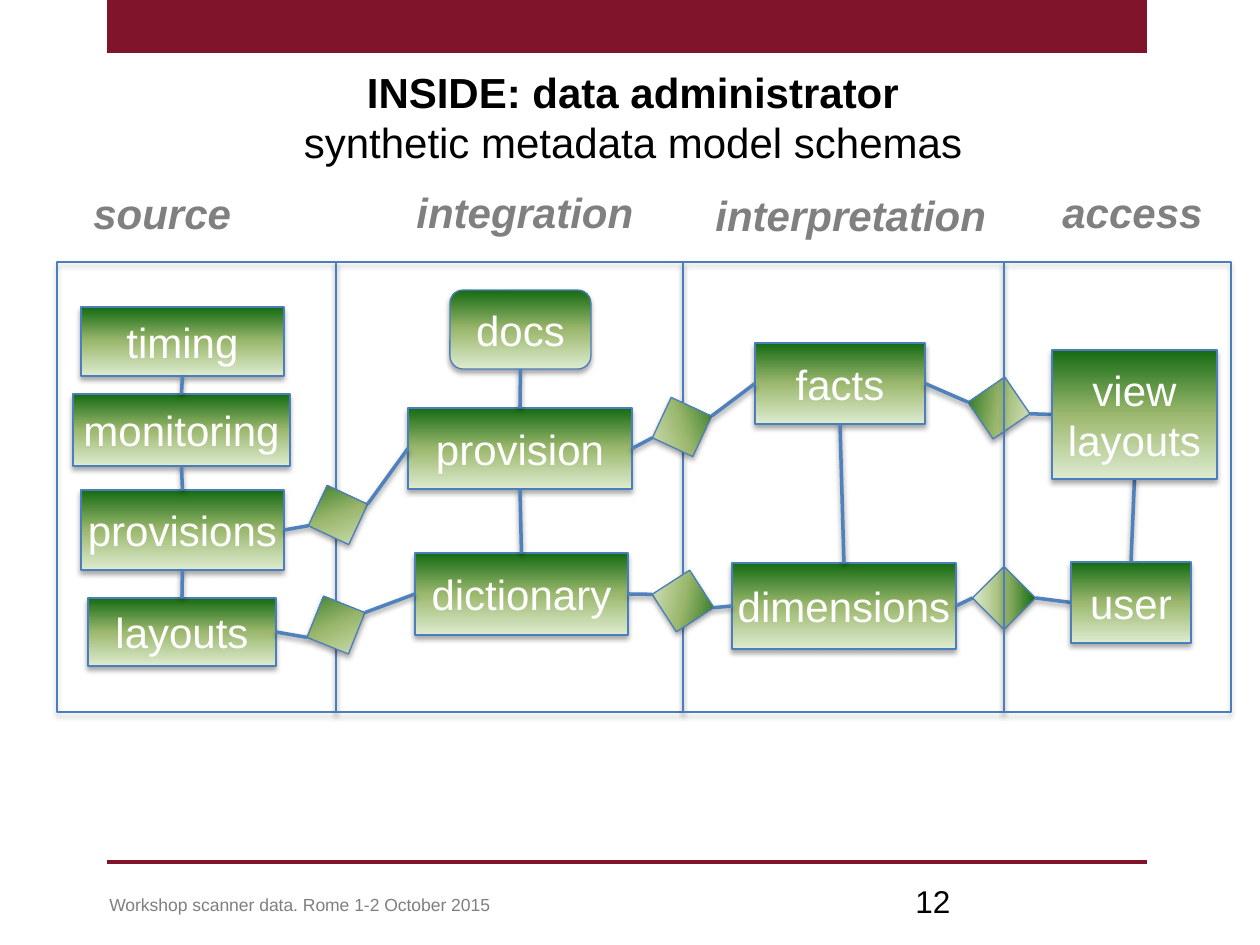
import copy
import math
from dataclasses import dataclass

from pptx import Presentation
from pptx import oxml
from pptx import util as u
from pptx.dml.color import RGBColor
from pptx.enum import shapes, text
from pptx.oxml.ns import qn

PX = 914400 / 126


@dataclass(frozen=True)
class Theme:
    """Colours, type sizes and font of the slide."""
    font: str = "Arial"
    brand: str = "7F142A"
    ink: str = "000000"
    heading: str = "808080"
    footer: str = "7F7F7F"
    white: str = "FFFFFF"
    outline: str = "4B7EBC"
    link: str = "4F81BD"
    greens: tuple = ((0, "DDEBCF"), (0.5, "9CB86E"), (1, "156B13"))
    large: int = 24
    number: int = 18
    small: int = 10


T = Theme()
SCHEMA = (57, 262, 1174, 450)
JOINT = 63

LANES = [
    ("source", 0, 279, (24, -81), {
        "timing": (24, 45, 203, 69),
        "monitoring": (16, 132, 217, 72),
        "provisions": (24, 228, 203, 80),
        "layouts": (31, 336, 188, 68)}),
    ("integration", 279, 347, (68, -82), {
        "docs": (114, 28, 141, 79),
        "provision": (72, 146, 224, 81),
        "dictionary": (79, 291, 213, 82)}),
    ("interpretation", 626, 321, (20, -79), {
        "facts": (72, 81, 170, 81),
        "dimensions": (49, 301, 224, 86)}),
    ("access", 947, 227, (46, -82), {
        "view layouts": (48, 88, 165, 129),
        "user": (67, 300, 120, 81)}),
]

JOINTS = [
    ("provisions", "provision", 281, 253, 340),
    ("layouts", "dictionary", 279, 363, 336.8),
    ("provision", "facts", 625, 165, 69.9),
    ("dictionary", "dimensions", 626, 339, 102.2),
    ("facts", "view layouts", 942, 146, 280.6),
    ("dimensions", "user", 947, 336, 90),
]

STACKS = [
    ("timing", "monitoring"), ("monitoring", "provisions"), ("provisions", "layouts"),
    ("docs", "provision"), ("provision", "dictionary"),
    ("facts", "dimensions"), ("view layouts", "user"),
]


def emu(*values):
    """Turn px lengths into EMU."""
    return [u.Emu(round(v * PX)) for v in values]


def rgb(color):
    """Return the colour object of a hex string."""
    return RGBColor.from_string(color)


def add_shadow(sp, alpha, dist):
    """Give a shape or connector a soft shadow straight below it."""
    sp.shadow.inherit = False
    effects = sp._element.spPr.find(qn("a:effectLst"))
    effects.append(oxml.parse_xml(
        '<a:outerShdw xmlns:a="http://schemas.openxmlformats.org/drawingml/2006/main"'
        f' blurRad="{u.Pt(3.1)}" dist="{u.Pt(dist)}" dir="5400000" rotWithShape="0">'
        f'<a:srgbClr val="000000"><a:alpha val="{alpha * 1000}"/></a:srgbClr></a:outerShdw>'))


def write(tf, lines, size=T.large, color=T.ink, bold=False, italic=False, align=None):
    """Write one paragraph; lines is a string or (string, bold) pairs split by breaks."""
    p = tf.paragraphs[0]
    p.alignment = align
    pairs = [(lines, bold)] if isinstance(lines, str) else lines
    for i, (words, heavy) in enumerate(pairs):
        if i:
            p.add_line_break()
        r = p.add_run()
        r.text = words
        r.font.name, r.font.size = T.font, u.Pt(size)
        r.font.bold, r.font.italic = heavy, italic
        r.font.color.rgb = rgb(color)


def add_label(s, box, lines, wrap=True, **fmt):
    """Add a text box."""
    tf = s.shapes.add_textbox(*emu(*box)).text_frame
    tf.word_wrap = wrap
    write(tf, lines, **fmt)


def add_outlined(s, kind, box):
    """Add an unfilled shape with the thin outline and shadow of the diagram."""
    sp = s.shapes.add_shape(kind, *emu(*box))
    sp.fill.background()
    sp.line.color.rgb = rgb(T.outline)
    sp.line.width = u.Pt(0.75)
    add_shadow(sp, 35, 1.8)
    return sp


def add_green(s, kind, box):
    """Add an outlined shape filled with the green gradient."""
    sp = add_outlined(s, kind, box)
    sp.fill.gradient()
    sp.fill.gradient_angle = 90
    stops = sp._element.spPr.find(".//" + qn("a:gsLst"))
    stops.append(copy.deepcopy(stops[0]))
    for stop, (pos, color) in zip(sp.fill.gradient_stops, T.greens):
        stop.position = pos
        stop.color.rgb = rgb(color)
    return sp


def add_line(s, start, end, color):
    """Add a 2 pt straight connector."""
    ln = s.shapes.add_connector(shapes.MSO_CONNECTOR.STRAIGHT, *emu(*start, *end))
    ln.line.color.rgb = rgb(color)
    ln.line.width = u.Pt(2)
    ln.shadow.inherit = False
    return ln


def add_link(s, start, end):
    """Add a shadowed link of the diagram."""
    add_shadow(add_line(s, start, end, T.link), 38, 1.6)


def anchor(box, side, rot=0):
    """Return the edge midpoint of a turned box that lies furthest to a side."""
    x, y, w, h = box
    c, n = math.cos(math.radians(rot)), math.sin(math.radians(rot))
    mids = [(-w / 2, 0), (w / 2, 0), (0, -h / 2), (0, h / 2)]
    points = [(x + w / 2 + a * c - b * n, y + h / 2 + a * n + b * c) for a, b in mids]
    pick = min if side in ("left", "top") else max
    return pick(points, key=lambda pt: pt[0 if side in ("left", "right") else 1])


def lane(s, box, name, offset, nodes):
    """Draw one lane with its heading and nodes."""
    x, y, w, h = box
    add_outlined(s, shapes.MSO_SHAPE.RECTANGLE, box)
    add_label(s, (x + offset[0], y + offset[1], w, 63), name, wrap=False,
              color=T.heading, bold=True, italic=True)
    for word, node in nodes.items():
        kind = shapes.MSO_SHAPE.ROUNDED_RECTANGLE if word == "docs" else shapes.MSO_SHAPE.RECTANGLE
        tf = add_green(s, kind, node).text_frame
        tf.word_wrap = True
        tf.margin_left = tf.margin_right = u.Inches(0.04)
        tf.vertical_anchor = text.MSO_ANCHOR.MIDDLE
        write(tf, word, color=T.white, align=text.PP_ALIGN.CENTER)


def links(s, box, nodes):
    """Draw the diamonds between lanes and every link of the diagram."""
    for a, b in STACKS:
        add_link(s, anchor(nodes[a], "bottom"), anchor(nodes[b], "top"))
    for a, b, cx, cy, rot in JOINTS:
        joint = (box[0] + cx - JOINT / 2, box[1] + cy - JOINT / 2, JOINT, JOINT)
        add_green(s, shapes.MSO_SHAPE.DIAMOND, joint).rotation = rot
        add_link(s, anchor(nodes[a], "right"), anchor(joint, "left", rot))
        add_link(s, anchor(joint, "right", rot), anchor(nodes[b], "left"))


def schema(s, box):
    """Draw the metadata model; the last lane's border runs over the diamonds."""
    x, y, _, h = box
    lanes = []
    for name, dx, w, offset, parts in LANES:
        nodes = {k: (x + dx + a, y + b, c, d) for k, (a, b, c, d) in parts.items()}
        lanes.append(((x + dx, y, w, h), name, offset, nodes))
    for args in lanes[:-1]:
        lane(s, *args)
    links(s, box, {k: v for *_, nodes in lanes for k, v in nodes.items()})
    lane(s, *lanes[-1])


def header(s, box):
    """Draw the top band and the title."""
    x, y, w, h = box
    sp = s.shapes.add_shape(shapes.MSO_SHAPE.RECTANGLE, *emu(x, y, w, h))
    sp.fill.solid()
    sp.fill.fore_color.rgb = rgb(T.brand)
    sp.line.fill.background()
    sp.shadow.inherit = False
    add_label(s, (x - 41, y + 60, 1134, 107),
              [("INSIDE: data administrator", True), ("synthetic metadata model schemas", False)],
              align=text.PP_ALIGN.CENTER)


def footer(s, box):
    """Draw the bottom rule, the event and the page number."""
    x, y, w, _ = box
    add_line(s, (x, y), (x + w, y), T.brand)
    add_label(s, (x - 10, y + 26, 843, 34), "Workshop scanner data. Rome 1-2 October 2015",
              size=T.small, color=T.footer)
    add_label(s, (x + 796, y + 14, 294, 50), "12", size=T.number)


def main():
    """Build and save the slide."""
    prs = Presentation()
    prs.slide_width, prs.slide_height = emu(1260, 945)
    s = prs.slides.add_slide(prs.slide_layouts[6])
    header(s, (107, 0, 1040, 53))
    schema(s, SCHEMA)
    footer(s, (107, 862, 1040, 83))
    prs.save("out.pptx")


if __name__ == "__main__":
    main()
